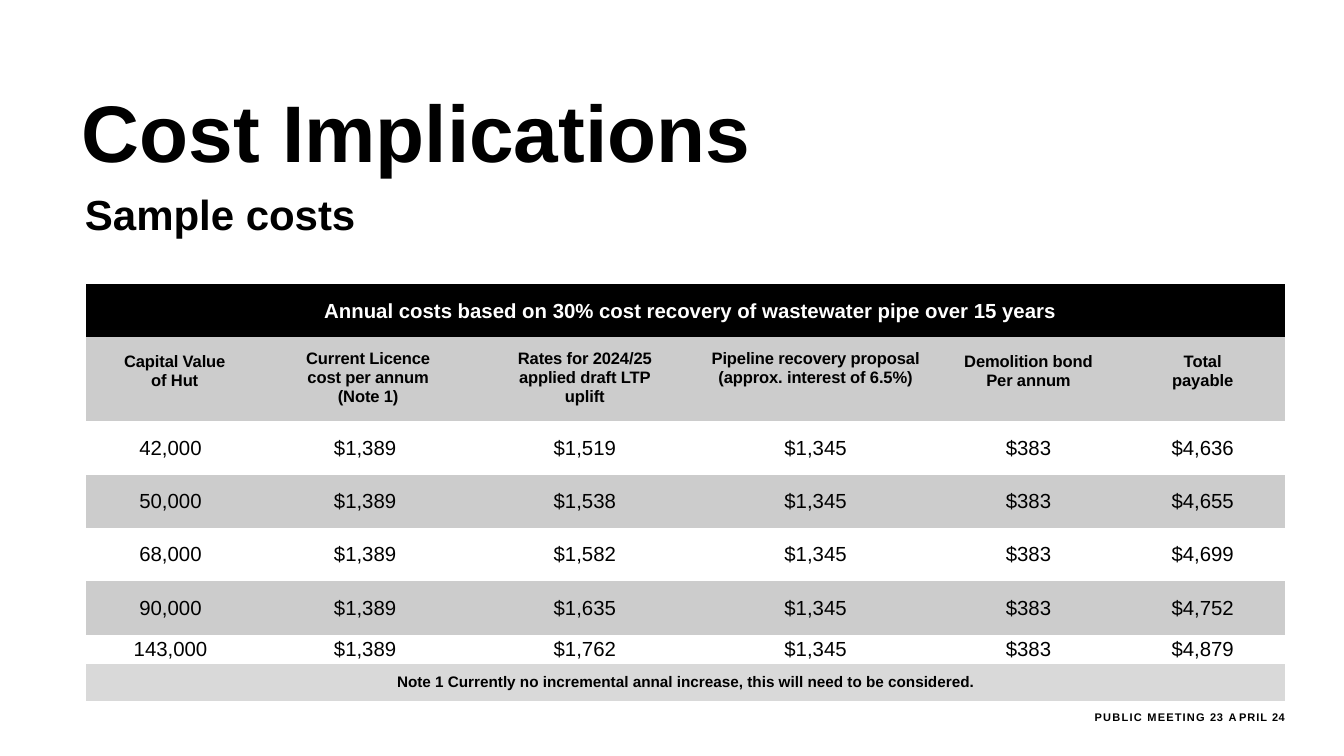
from dataclasses import dataclass

from pptx import Presentation
from pptx.dml.color import RGBColor
from pptx.enum.text import MSO_ANCHOR, MSO_AUTO_SIZE, PP_ALIGN
from pptx.util import Pt


@dataclass(frozen=True)
class Theme:
    """Colours, font and type sizes of the deck."""
    font: str = "Arial"
    black: str = "000000"
    white: str = "FFFFFF"
    band: str = "CCCCCC"
    pale: str = "D9D9D9"
    title: float = 94.5
    sub: float = 49.5
    body: float = 24
    head: float = 19.5
    note: float = 18
    foot: float = 13


THEME = Theme()
PLAIN = "{2D5ABB26-0587-4C30-8999-92F81FD0307C}"
BANNER = "Annual costs based on 30% cost recovery of wastewater pipe over 15 years"
NOTE = "Note 1 Currently no incremental annal increase, this will need to be considered."
WIDTHS = [198.7, 259.9, 257.8, 285.8, 216, 194.4]
HEIGHTS = [62, 99.4, 63.2, 62.8, 62.8, 62.8, 34.8, 43.4]
HEADS = [
    ("Capital Value\nof Hut", 18.7, 10, -0.2),
    ("Current Licence\ncost per annum\n(Note 1)", 15.1, 7.2, -0.2),
    ("Rates for 2024/25\napplied draft LTP\nuplift", 15.1, 0, -0.2),
    ("Pipeline recovery proposal (approx. interest of 6.5%)", 15.1, 0, -0.2),
    ("Demolition bond\nPer annum", 18.7, 0, -0.2),
    ("Total\npayable", 18.7, 0, -0.1),
]
COSTS = [
    ("42,000", "$1,389", "$1,519", "$1,345", "$383", "$4,636"),
    ("50,000", "$1,389", "$1,538", "$1,345", "$383", "$4,655"),
    ("68,000", "$1,389", "$1,582", "$1,345", "$383", "$4,699"),
    ("90,000", "$1,389", "$1,635", "$1,345", "$383", "$4,752"),
    ("143,000", "$1,389", "$1,762", "$1,345", "$383", "$4,879"),
]
FOOTER = [("PUBLIC ", 1.5), ("MEETING ", 1.4), ("23", 0.7),
          (" A", 2.9), ("PRIL ", 1.2), ("24", 0.5)]


def add_run(para, text, size, color=THEME.black, bold=True, space=0):
    """Add one styled run, with a line break at each newline."""
    for i, line in enumerate(text.split("\n")):
        if i:
            para.add_line_break()
        run = para.add_run()
        run.text = line
        font = run.font
        font.name, font.size, font.bold = THEME.font, Pt(size), bold
        font.color.rgb = RGBColor.from_string(color)
        if space:
            font._element.set("spc", str(round(space * 100)))


def set_frame(frame):
    """Clear the insets of a text frame and let it wrap."""
    frame.word_wrap = True
    frame.auto_size = MSO_AUTO_SIZE.NONE
    frame.vertical_anchor = MSO_ANCHOR.TOP
    frame.margin_left = frame.margin_right = 0
    frame.margin_top = frame.margin_bottom = 0


def add_title(slide, x, y, w, h):
    """Fill the title holder with the title and the line below it."""
    shape = slide.shapes.title
    shape.left, shape.top, shape.width, shape.height = map(Pt, (x, y, w, h))
    frame = shape.text_frame
    set_frame(frame)
    top, sub = frame.paragraphs[0], frame.add_paragraph()
    top.alignment = sub.alignment = PP_ALIGN.LEFT
    top.space_before, sub.space_before = Pt(0), Pt(11.6)
    sub._p.get_or_add_pPr().set("marL", str(Pt(3.6)))
    add_run(top, "Cost", THEME.title)
    add_run(top, " Implications", THEME.title, space=-0.1)
    add_run(sub, "Sample costs", THEME.sub)


def fill_cell(cell, text, size, fill=None, top=None, indent=0, **style):
    """Write centred text in a cell; a top inset anchors it to the top."""
    if fill:
        cell.fill.solid()
        cell.fill.fore_color.rgb = RGBColor.from_string(fill)
    else:
        cell.fill.background()
    cell.vertical_anchor = MSO_ANCHOR.MIDDLE
    if top is not None:
        cell.vertical_anchor = MSO_ANCHOR.TOP
        cell.margin_left = cell.margin_right = cell.margin_bottom = 0
        cell.margin_top = Pt(top)
    para = cell.text_frame.paragraphs[0]
    para.alignment = PP_ALIGN.CENTER
    if indent:
        para._p.get_or_add_pPr().set("marL", str(Pt(indent)))
    add_run(para, text, size, **style)


def add_costs(slide, x, y, w, h):
    """Add the table of costs with its banner, heads and note."""
    frame = slide.shapes.add_table(len(HEIGHTS), len(WIDTHS), Pt(x), Pt(y), Pt(w), Pt(h))
    table = frame.table
    table.first_row = table.horz_banding = False
    table._tbl.tblPr[0].text = PLAIN
    for col, width in zip(table.columns, WIDTHS):
        col.width = Pt(width)
    for row, height in zip(table.rows, HEIGHTS):
        row.height = Pt(height)
    last = len(HEIGHTS) - 1
    for r in (0, last):
        table.cell(r, 0).merge(table.cell(r, len(WIDTHS) - 1))
    fill_cell(table.cell(0, 0), BANNER, THEME.body, THEME.black, 18.7, 10, color=THEME.white)
    for c, (text, top, indent, space) in enumerate(HEADS):
        fill_cell(table.cell(1, c), text, THEME.head, THEME.band, top, indent, space=space)
    for r, costs in enumerate(COSTS):
        fill = THEME.band if r % 2 else None
        for c, text in enumerate(costs):
            fill_cell(table.cell(r + 2, c), text, THEME.body, fill, bold=False)
    fill_cell(table.cell(last, 0), NOTE, THEME.note, THEME.pale)


def add_footer(slide, x, y, w, h):
    """Add the spaced meeting line, set to the right."""
    frame = slide.shapes.add_textbox(Pt(x), Pt(y), Pt(w), Pt(h)).text_frame
    set_frame(frame)
    para = frame.paragraphs[0]
    para.alignment = PP_ALIGN.RIGHT
    for text, space in FOOTER:
        add_run(para, text, THEME.foot, space=space)


def main():
    """Build the slide and save the deck."""
    deck = Presentation()
    deck.slide_width, deck.slide_height = Pt(1583.3), Pt(890.6)
    slide = deck.slides.add_slide(deck.slide_layouts[5])
    add_footer(slide, 1251.4, 836.5, 262, 16)
    add_title(slide, 96.5, 97, 955, 178)
    add_costs(slide, 101.5, 334.8, sum(WIDTHS), sum(HEIGHTS))
    deck.save("out.pptx")


if __name__ == "__main__":
    main()
